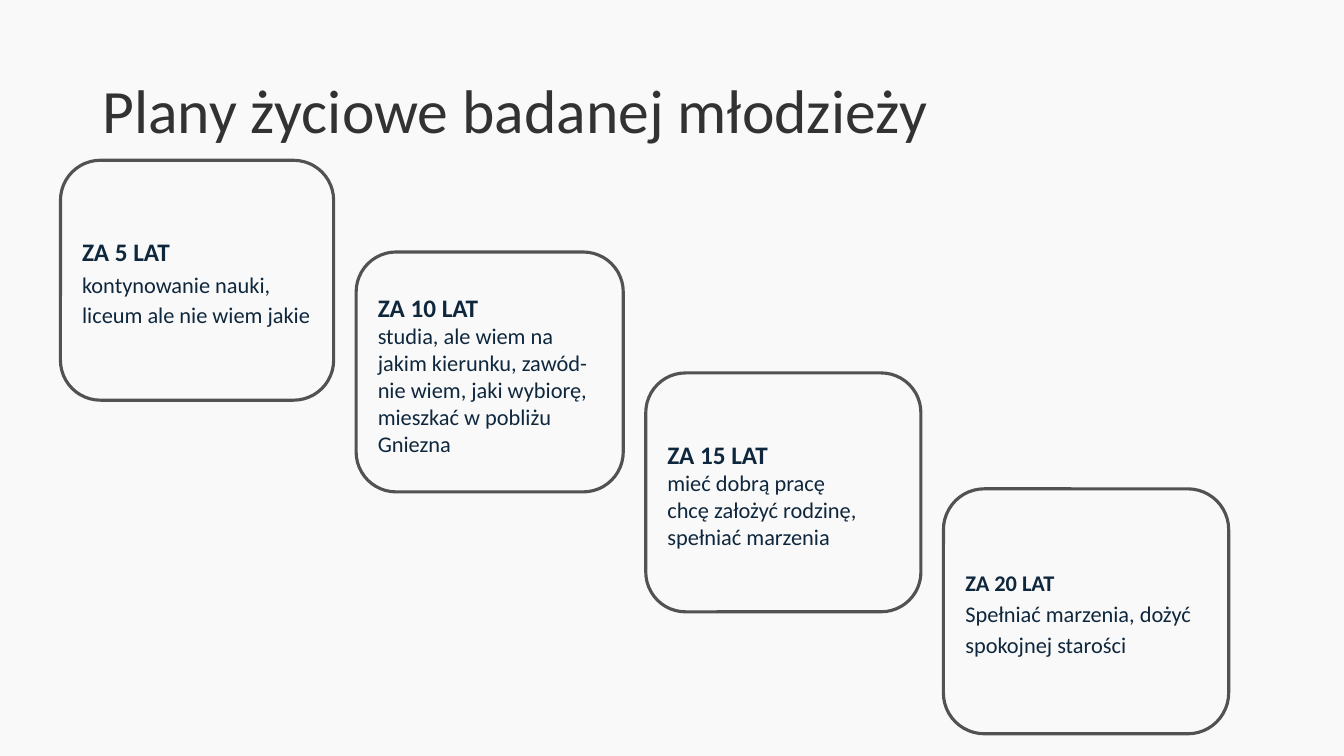
from dataclasses import dataclass

from pptx import Presentation
from pptx import util as u
from pptx.dml.color import RGBColor
from pptx.enum import shapes, text


@dataclass(frozen=True)
class Theme:
    font: str = "Calibri"
    paper: RGBColor = RGBColor(0xF9, 0xF9, 0xF9)
    title: RGBColor = RGBColor(0x32, 0x32, 0x32)
    ink: RGBColor = RGBColor(0x0F, 0x27, 0x3D)
    outline: RGBColor = RGBColor(0x52, 0x52, 0x52)
    title_size: int = 44
    heading_size: int = 18
    body_size: int = 16
    loose: float = 1.15


THEME = Theme()

# Grid of 40 columns by 30 rows
WIDTH, HEIGHT = u.Inches(13.33), u.Inches(7.5)
COLUMN, ROW = WIDTH / 40, HEIGHT / 30
FIRST_LEFT, GAP = 1.8, 0.67

# Each card: top row, columns wide, rows high, heading size, body spacing, heading, body
CARDS = [
    (6.36, 8.13, 9.52, THEME.heading_size, THEME.loose, "ZA 5 LAT",
     ["kontynowanie nauki, liceum ale nie wiem jakie"]),
    (10, 7.95, 9.52, THEME.heading_size, 1.0, "ZA 10 LAT",
     ["studia, ale wiem na jakim kierunku, zawód- nie wiem, jaki wybiorę, "
      "mieszkać w pobliżu Gniezna"]),
    (14.8, 8.19, 9.48, THEME.heading_size, 1.0, "ZA 15 LAT",
     ["mieć dobrą pracę", "chcę założyć rodzinę, spełniać marzenia"]),
    (19.4, 8.49, 9.72, THEME.body_size, THEME.loose, "ZA 20 LAT",
     ["Spełniać marzenia, dożyć spokojnej starości"]),
]


def grid(left, top, columns, rows):
    return (round(left * COLUMN), round(top * ROW),
            round(columns * COLUMN), round(rows * ROW))


def write(para, words, size, color, spacing, bold=False):
    para.alignment = text.PP_ALIGN.LEFT
    para.line_spacing = spacing
    span = para.add_run()
    span.text = words
    span.font.name = THEME.font
    span.font.size = u.Pt(size)
    span.font.bold = bold
    span.font.color.rgb = color


def add_title(page, words):
    title = page.shapes.title
    title.left, title.top, title.width, title.height = grid(2.75, 1.6, 34.5, 5.8)
    title.text_frame.vertical_anchor = text.MSO_ANCHOR.MIDDLE
    write(title.text_frame.paragraphs[0], words, THEME.title_size, THEME.title, 0.9)


def add_card(page, area, heading, heading_size, body, body_spacing):
    card = page.shapes.add_shape(shapes.MSO_SHAPE.ROUNDED_RECTANGLE, *area)
    card.shadow.inherit = False
    card.fill.solid()
    card.fill.fore_color.rgb = THEME.paper
    card.line.color.rgb = THEME.outline
    card.line.width = u.Pt(2.25)
    frame = card.text_frame
    frame.word_wrap = True
    frame.vertical_anchor = text.MSO_ANCHOR.MIDDLE
    write(frame.paragraphs[0], heading, heading_size, THEME.ink, THEME.loose, bold=True)
    for words in body:
        write(frame.add_paragraph(), words, THEME.body_size, THEME.ink, body_spacing)


def main():
    deck = Presentation()
    deck.slide_width, deck.slide_height = WIDTH, HEIGHT
    page = deck.slides.add_slide(deck.slide_layouts.get_by_name("Title Only"))
    page.background.fill.solid()
    page.background.fill.fore_color.rgb = THEME.paper

    add_title(page, "Plany życiowe badanej młodzieży")

    # Cards descend from left to right with equal gaps
    left = FIRST_LEFT
    for top, columns, rows, heading_size, spacing, heading, body in CARDS:
        add_card(page, grid(left, top, columns, rows), heading, heading_size, body, spacing)
        left += columns + GAP

    deck.save("out.pptx")


if __name__ == "__main__":
    main()
